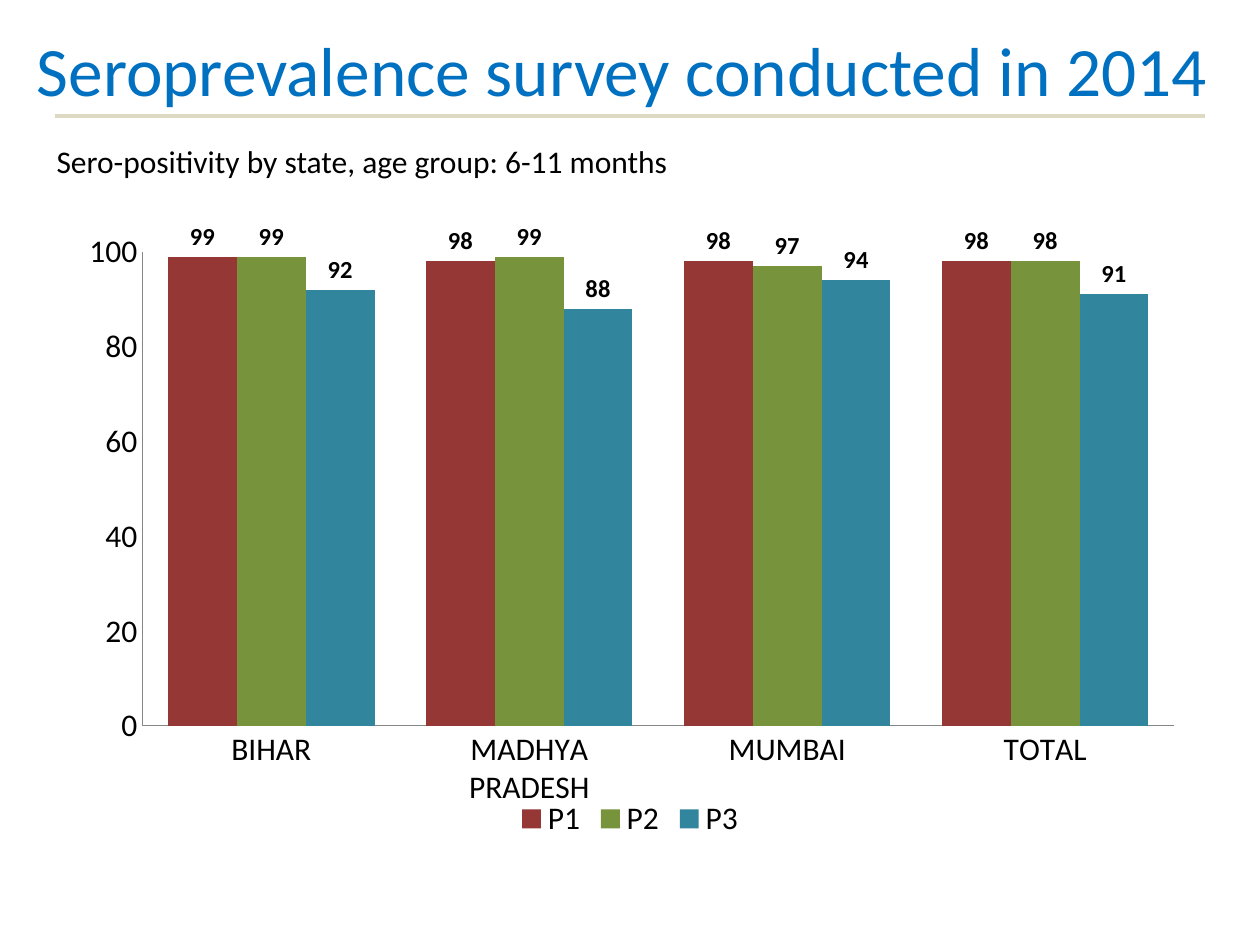
from lxml import etree
from pptx import Presentation
from pptx.chart.data import CategoryChartData
from pptx.dml.color import RGBColor
from pptx.enum.chart import XL_CHART_TYPE, XL_LABEL_POSITION, XL_LEGEND_POSITION, XL_TICK_MARK
from pptx.enum.shapes import MSO_CONNECTOR
from pptx.enum.text import MSO_ANCHOR, PP_ALIGN
from pptx.oxml.ns import qn
from pptx.util import Cm, Pt


def color(value):
    return RGBColor.from_string(value)


def set_all(target, **values):
    for name, value in values.items():
        setattr(target, name, value)


class SlideBuilder:
    font = "Calibri"
    ink = "000000"
    axis_gray = "868686"

    def __init__(self, slide):
        self.slide = slide

    def style_font(self, font, size, hex_color=None, bold=False):
        set_all(font, name=self.font, size=Pt(size), bold=bold)
        font.color.rgb = color(hex_color or self.ink)

    def text(self, content, left, top, width, height, size, hex_color=None, wrap=True,
             align=PP_ALIGN.LEFT, anchor=MSO_ANCHOR.TOP):
        box = self.slide.shapes.add_textbox(Cm(left), Cm(top), Cm(width), Cm(height))
        set_all(box.text_frame, word_wrap=wrap, vertical_anchor=anchor)
        para = box.text_frame.paragraphs[0]
        para.alignment = align
        span = para.add_run()
        span.text = content
        self.style_font(span.font, size, hex_color)

    def rule(self, left, right, top, hex_color, width):
        line = self.slide.shapes.add_connector(
            MSO_CONNECTOR.STRAIGHT, Cm(left), Cm(top), Cm(right), Cm(top))
        line.line.color.rgb = color(hex_color)
        line.line.width = Pt(width)
        etree.SubElement(line._element.spPr, qn("a:effectLst"))

    def column_chart(self, categories, series, left, top, width, height, layout):
        data = CategoryChartData(number_format="0")
        data.categories = categories
        for name, (_, values) in series.items():
            data.add_series(name, values)
        chart = self.slide.shapes.add_chart(
            XL_CHART_TYPE.COLUMN_CLUSTERED, Cm(left), Cm(top), Cm(width), Cm(height), data).chart
        set_all(chart, has_title=False, has_legend=True)
        self.style_font(chart.font, 18)
        set_all(chart.legend, position=XL_LEGEND_POSITION.BOTTOM, include_in_layout=False)

        # Axes
        for axis in (chart.category_axis, chart.value_axis):
            set_all(axis, major_tick_mark=XL_TICK_MARK.NONE, minor_tick_mark=XL_TICK_MARK.NONE,
                    has_major_gridlines=False)
            axis.format.line.color.rgb = color(self.axis_gray)
            axis.format.line.width = Pt(0.75)
        set_all(chart.value_axis, minimum_scale=0, maximum_scale=100, major_unit=20)
        set_all(chart.value_axis.tick_labels, number_format="0", number_format_is_linked=False)

        # Columns and their labels
        plot = chart.plots[0]
        set_all(plot, gap_width=75, overlap=0, vary_by_categories=False)
        for column, (hex_color, _) in zip(plot.series, series.values()):
            column.format.fill.solid()
            column.format.fill.fore_color.rgb = color(hex_color)
            set_all(column.data_labels, show_value=True, number_format="0",
                    number_format_is_linked=False, position=XL_LABEL_POSITION.OUTSIDE_END)
            self.style_font(column.data_labels.font, 14, bold=True)

        # Fixed plot area, leaving room for labels above the 100 mark
        plot_area = chart._chartSpace.chart.plotArea
        for old in plot_area.findall(qn("c:layout")):
            plot_area.remove(old)
        outer = etree.Element(qn("c:layout"))
        plot_area.insert(0, outer)
        manual = etree.SubElement(outer, qn("c:manualLayout"))
        settings = {"layoutTarget": "inner", "xMode": "edge", "yMode": "edge", **layout}
        for tag, value in settings.items():
            etree.SubElement(manual, qn(f"c:{tag}")).set("val", str(value))


def main():
    deck = Presentation()
    set_all(deck, slide_width=Cm(25.4), slide_height=Cm(19.05))
    page = SlideBuilder(deck.slides.add_slide(deck.slide_layouts[6]))

    # Heading
    page.text("Seroprevalence survey conducted in 2014 ", 0, 0.03, 25.4, 2.7, 39.6, "0070C0",
              align=PP_ALIGN.CENTER, anchor=MSO_ANCHOR.MIDDLE)

    # Chart
    states = ["BIHAR", "MADHYA PRADESH", "MUMBAI", "TOTAL"]
    positivity = {
        "P1": ("953735", (99, 98, 98, 98)),
        "P2": ("77933C", (99, 99, 97, 98)),
        "P3": ("31859C", (92, 88, 94, 91)),
    }
    page.column_chart(states, positivity, 1.27, 4.45, 22.86, 12.57,
                      {"x": 0.07, "y": 0.05, "w": 0.91, "h": 0.76})

    # Subtitle and rule
    page.text("Sero-positivity by state, age group: 6-11 months", 0.89, 2.74, 12.98, 1.02, 18,
              wrap=False)
    page.rule(1.1, 24.3, 2.34, "DDD9C3", 2.25)

    deck.save("out.pptx")


if __name__ == "__main__":
    main()
